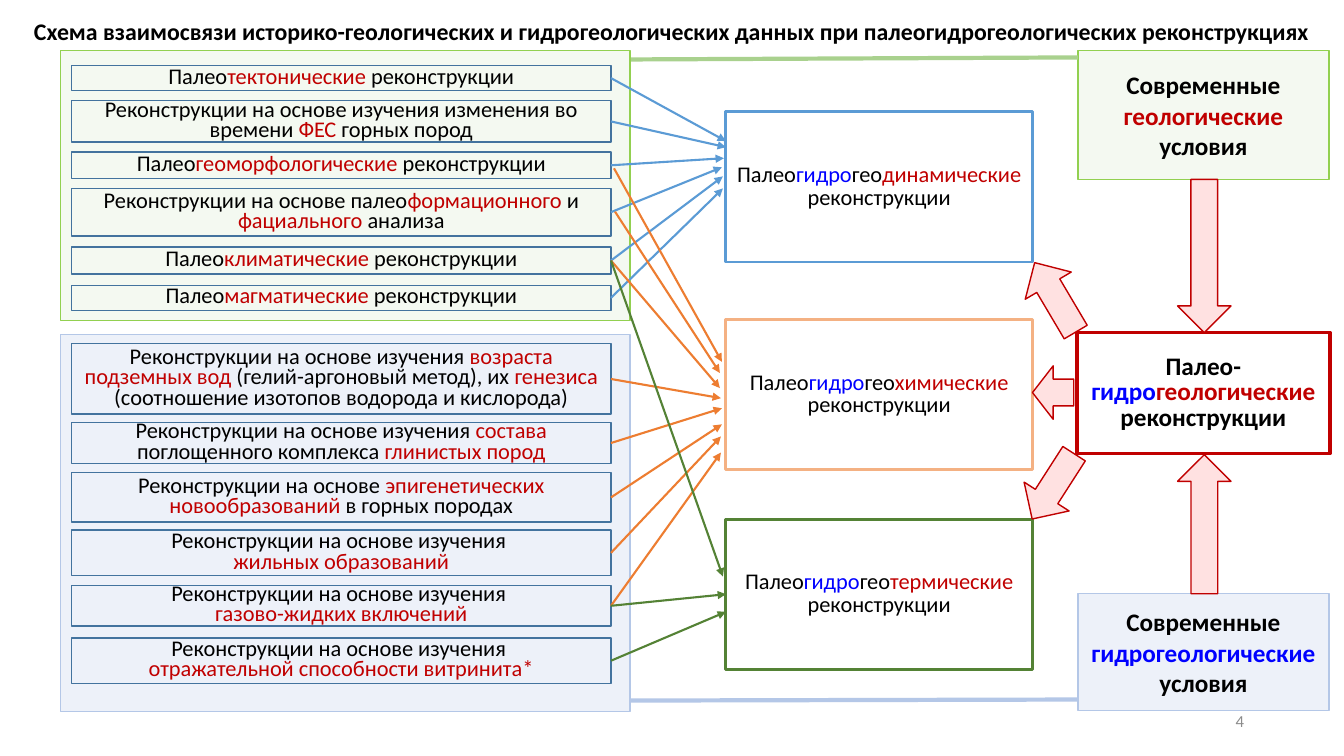
from dataclasses import dataclass
from lxml.etree import SubElement as Sub
from pptx import Presentation
from pptx.dml.color import RGBColor as RGB
from pptx.enum.shapes import MSO_CONNECTOR as Link, MSO_SHAPE as Form
from pptx.enum.text import MSO_ANCHOR as Anchor, PP_ALIGN as Align
from pptx.oxml.ns import qn
from pptx.util import Inches, Pt


@dataclass(frozen=True)
class Theme:
    font: str = "Calibri"
    black: str = "000000"
    red: str = "C00000"
    blue: str = "0000FF"
    gray: str = "8C8C8C"
    frame: str = "43739E"
    sky: str = "5B9BD5"
    peach: str = "F4B183"
    orange: str = "ED7D31"
    green: str = "548235"
    lime: str = "92D050"
    leaf: str = "A9D18E"
    mint: str = "F4F9F1"
    ice: str = "EDF1F9"
    steel: str = "B4C7E7"
    pink: str = "FFE1E1"
    small: int = 12
    body: int = 16
    title: int = 17
    large: int = 18


def write(shape, text, size, font, inks, bold=False, align=Align.CENTER, gap=1.0):
    """Fill a shape; "|" parts the runs, a key such as "r:" picks the ink."""
    frame = shape.text_frame
    frame.word_wrap = True
    frame.vertical_anchor = Anchor.MIDDLE
    frame.margin_left = frame.margin_right = Inches(0.08)
    para = frame.paragraphs[0]
    para.alignment, para.line_spacing = align, gap
    for part in text.split("|"):
        if part == "\n":
            para.add_line_break()
            Sub(para._p[-1], qn("a:rPr"), sz=str(size * 100))
            continue
        key = part[:2] if part[:2] in inks else ""
        run = para.add_run()
        run.text = part[len(key):]
        run.font.name, run.font.size, run.font.bold = font, Pt(size), bold
        run.font.color.rgb = RGB.from_string(inks[key])


class Board:
    def __init__(self, slide, theme):
        self.slide, self.theme = slide, theme

    def text(self, shape, text, size, ink=None, **form):
        t = self.theme
        inks = {"": ink or t.black, "r:": t.red, "b:": t.blue}
        write(shape, text, size, t.font, inks, **form)

    def label(self, area, text, size, **form):
        box = self.slide.shapes.add_textbox(*map(Inches, area))
        self.text(box, text, size, **form)

    def box(self, area, line, width=1.0, fill=None, form=Form.RECTANGLE):
        shape = self.slide.shapes.add_shape(form, *map(Inches, area))
        shape.shadow.inherit = False
        if fill:
            shape.fill.solid()
            shape.fill.fore_color.rgb = RGB.from_string(fill)
        else:
            shape.fill.background()
        shape.line.color.rgb = RGB.from_string(line)
        shape.line.width = Pt(width)
        return shape

    def arrow(self, area, turn):
        t = self.theme
        self.box(area, t.red, fill=t.pink, form=Form.DOWN_ARROW).rotation = turn

    def line(self, start, end, ink, width=1.5, head=True):
        """Join two ends; each is a point or a box (right side to left side)."""
        first = start if isinstance(start, tuple) else (0, 0)
        last = end if isinstance(end, tuple) else (0, 0)
        link = self.slide.shapes.add_connector(
            Link.STRAIGHT, *map(Inches, first + last))
        if first is not start:
            link.begin_connect(start, 3)
        if last is not end:
            link.end_connect(end, 1)
        link.line.color.rgb = RGB.from_string(ink)
        link.line.width = Pt(width)
        if head:
            Sub(link.line._get_or_add_ln(), qn("a:tailEnd"), type="triangle")
        Sub(link._element.spPr, qn("a:effectLst"))


def main():
    deck = Presentation()
    deck.slide_width, deck.slide_height = Inches(13.33), Inches(7.5)
    t = Theme()
    board = Board(deck.slides.add_slide(deck.slide_layouts[6]), t)

    # Background panels, title and page number
    board.box((0.6, 3.32, 5.65, 3.74), t.steel, fill=t.ice)
    board.box((0.6, 0.5, 5.65, 2.68), t.lime, fill=t.mint)
    board.label((9.42, 6.95, 3, 0.4), "4", t.small, ink=t.gray, align=Align.RIGHT)
    board.label((0, 0, 13.33, 0.35),
                "Схема взаимосвязи историко-геологических и гидрогеологических "
                "данных при палеогидрогеологических реконструкциях",
                t.title, bold=True, gap=Pt(40))

    # Methods on the left: top, height, text
    base = "Реконструкции на основе "
    study = base + "изучения"
    rows = [
        (0.65, 0.25, "Палео|r:тектонические| реконструкции"),
        (1, 0.41, study + " изменения во времени |r:ФЕС| горных пород"),
        (1.51, 0.26, "Палео|r:геоморфологические| реконструкции"),
        (1.87, 0.47, base + "палео|r:формационного| и |r:фациального| анализа"),
        (2.45, 0.27, "Палео|r:климатические| реконструкции"),
        (2.83, 0.25, "Палео|r:магматические |реконструкции"),
        (3.41, 0.7, study + " |r:возраста подземных вод| (гелий-аргоновый метод), их "
         "|r:генезиса |(соотношение изотопов водорода и кислорода)"),
        (4.19, 0.41, study + " |r:состава| поглощенного комплекса |r:глинистых пород"),
        (4.69, 0.49, base + "|r:эпигенетических новообразований| в горных породах"),
        (5.26, 0.45, study + " |\n|r:жильных образований"),
        (5.81, 0.4, study + " |\n|r:газово-жидких включений"),
        (6.33, 0.45, study + " |\n|r:отражательной способности витринита*"),
    ]
    tools = []
    for top, high, text in rows:
        tool = board.box((0.71, top, 5.35, high), t.frame)
        board.text(tool, text, t.body, gap=0.75)
        tools.append(tool)

    # Three kinds of reconstruction in the middle
    goals = []
    for top, ink, kind in [(1.11, t.sky, "динамические"),
                           (3.17, t.peach, "химические"),
                           (5.15, t.green, "термические")]:
        goal = board.box((7.2, top, 3.04, 1.49), ink, 2)
        board.text(goal, f"Палео|b:гидро|гео|r:{kind}| реконструкции", t.body, gap=0.85)
        goals.append(goal)

    # Result and present conditions on the right
    result = board.box((10.68, 3.3, 2.51, 1.2), t.red, 2.5)
    board.text(result, "Палео-|b:гидро|r:геологические| реконструкции",
               t.large, bold=True, gap=0.85)
    for top, high, line, fill, kind in [
            (5.89, 1.16, t.steel, t.ice, "b:гидрогеологические"),
            (0.5, 1.28, t.lime, t.mint, "r:геологические")]:
        state = board.box((10.69, top, 2.49, high), line, fill=fill)
        board.text(state, f"Современные |{kind}| условия", t.large, bold=True)

    # Thin arrows: start (method number or point) and end
    fans = {
        t.sky: [(0, (7.2, 1.4)), (1, (7.2, 1.46)), (2, (7.18, 1.57)),
                (3, (7.16, 1.66)), (4, (7.17, 1.75)), (5, (7.17, 1.87))],
        t.orange: [((6.09, 1.67), (7.16, 3.59)), ((6.1, 2.1), (7.14, 3.7)),
                   (4, (7.14, 3.85)), (6, (7.15, 3.95)), (7, (7.16, 4.05)),
                   (8, (7.16, 4.21)), (9, (7.15, 4.33)), (10, (7.15, 4.49))],
        t.green: [(10, goals[2]), (11, (7.2, 6.07)), (4, (7.17, 5.72))],
    }
    for ink, links in fans.items():
        for start, end in links:
            board.line(tools[start] if isinstance(start, int) else start, end, ink)

    # Bars from the panels to the present conditions
    board.line((6.26, 0.59), (10.69, 0.57), t.leaf, 3, head=False)
    board.line((6.25, 6.95), (10.69, 6.94), t.steel, 3, head=False)

    # Block arrows: left, top, height, turn
    for left, top, high, turn in [(11.68, 1.78, 1.52, 0), (11.68, 4.51, 1.38, 180),
                                  (10.2, 2.55, 0.8, 149.4), (10.18, 4.44, 0.77, 32.7),
                                  (10.18, 3.69, 0.41, 90)]:
        board.arrow((left, top, 0.53, high), turn)

    deck.save("out.pptx")


if __name__ == "__main__":
    main()
